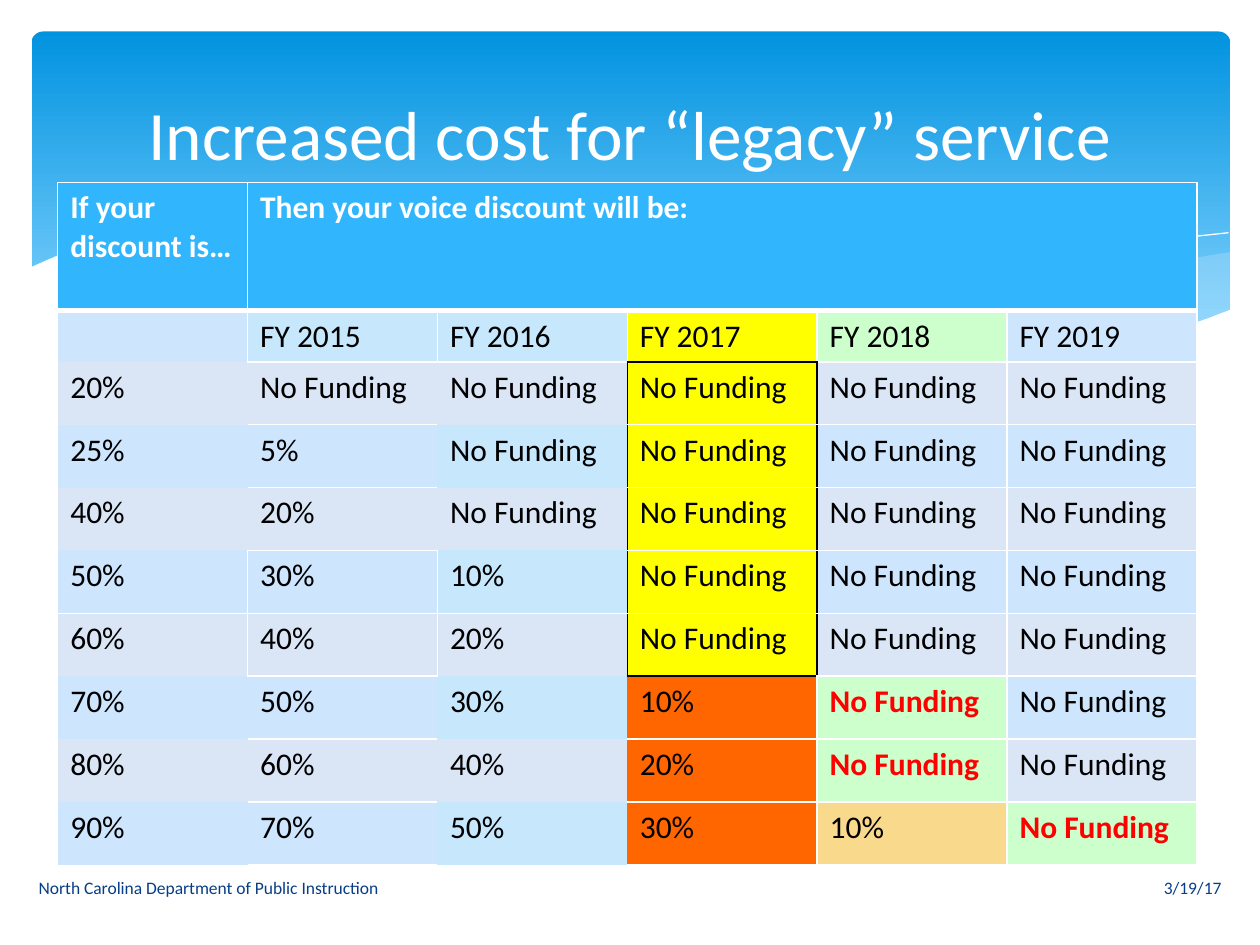
from lxml.etree import SubElement
from pptx import Presentation
from pptx.dml.color import RGBColor
from pptx.enum.shapes import MSO_SHAPE
from pptx.enum.text import MSO_ANCHOR, MSO_AUTO_SIZE, PP_ALIGN
from pptx.oxml.ns import qn
from pptx.util import Pt

WHITE, BLACK, RED, NAVY = "FFFFFF", "000000", "FF0000", "073E87"
YELLOW, ORANGE, GREEN, GOLD = "FFFF00", "FF6600", "CCFFCC", "F9D98C"
HEADER, BAND_ODD, BAND_EVEN, PALE = "31B6FD", "CEE5FE", "DAE6F6", "C6E7FC"

NONE = "No Funding"
ROWS = [
    ["If your discount is…", "Then your voice discount will be:", "", "", "", ""],
    ["", "FY 2015", "FY 2016", "FY 2017", "FY 2018", "FY 2019"],
    ["20%", NONE, NONE, NONE, NONE, NONE],
    ["25%", "5%", NONE, NONE, NONE, NONE],
    ["40%", "20%", NONE, NONE, NONE, NONE],
    ["50%", "30%", "10%", NONE, NONE, NONE],
    ["60%", "40%", "20%", NONE, NONE, NONE],
    ["70%", "50%", "30%", "10%", NONE, NONE],
    ["80%", "60%", "40%", "20%", NONE, NONE],
    ["90%", "70%", "50%", "30%", "10%", NONE],
]
NEWLY_LOST = {(7, 4), (8, 4), (9, 5)}

RIGHT_SWELL = [(685, 126), (655, 131), (624, 138), (581, 148), (524, 161), (458, 173),
               (490, 177), (527, 181), (560, 182), (597, 181), (628, 176), (655, 171),
               (685, 160)]
MIDDLE_SWELL = [(625, 179), (585, 173), (540, 165), (490, 155), (435, 142), (402, 134),
                (362, 126), (317, 120), (269, 116), (230, 116), (188, 120), (228, 125),
                (273, 134), (336, 149), (390, 161), (450, 172), (502, 179), (555, 182),
                (593, 181)]
FALLING_CREST = [(204, 122), (236, 118), (282, 117), (334, 119), (382, 124), (440, 132),
                 (505, 145), (580, 163), (635, 178)]
RISING_CREST = [(423, 167), (482, 151), (541, 138), (606, 125), (647, 119), (684, 115)]
WHITE_WAVE = [(685.4, 159), (672, 164), (652, 171), (629, 176), (603, 179), (575, 181),
              (542, 181), (505, 178), (463, 173), (416, 165), (363, 154), (304, 140),
              (263, 131), (227, 124), (192, 119), (162, 116), (134, 114.5), (109, 114.5),
              (87, 115), (68, 117), (50, 119.5), (37, 122), (24.5, 125), (15, 128),
              (8, 131), (-1.4, 135), (-1.4, 219), (685.4, 219)]


def rgb(value):
    return RGBColor.from_string(value)


def write(frame, text, size=18, color=BLACK, bold=False, align=PP_ALIGN.LEFT):
    paragraph = frame.paragraphs[0]
    paragraph.alignment = align
    run = paragraph.add_run()
    run.text = text
    run.font.name = "Calibri"
    run.font.size = Pt(size)
    run.font.bold = bold
    run.font.color.rgb = rgb(color)


def add_wave(slide, left, top, points, fill=None, alpha=None, line=None):
    placed = [(left + x, top + y) for x, y in points]
    builder = slide.shapes.build_freeform(*placed[0], scale=Pt(1))
    builder.add_line_segments(placed[1:], close=fill is not None)
    wave = builder.convert_to_shape()
    wave.shadow.inherit = False
    if fill:
        wave.fill.solid()
        wave.fill.fore_color.rgb = rgb(fill)
        if alpha:
            color = wave.element.spPr.find(qn("a:solidFill"))[0]
            SubElement(color, qn("a:alpha"), val=str(alpha * 1000))
    else:
        wave.fill.background()
    if line:
        wave.line.color.rgb = rgb(line)
        wave.line.width = Pt(0)
    else:
        wave.line.fill.background()


def add_backdrop(slide, left, top, width, height):
    sky = slide.shapes.add_shape(MSO_SHAPE.ROUNDED_RECTANGLE,
                                 Pt(left), Pt(top), Pt(width), Pt(height))
    sky.shadow.inherit = False
    sky.adjustments[0] = 0.034
    sky.line.fill.background()
    sky.fill.gradient()
    sky.fill.gradient_angle = 270
    for stop, color, position in zip(sky.fill.gradient_stops, ("0293E0", "83D3FE"), (0, 0.9)):
        stop.color.rgb = rgb(color)
        stop.position = position
    add_wave(slide, left, top, RIGHT_SWELL, fill=PALE, alpha=29)
    add_wave(slide, left, top, MIDDLE_SWELL, fill=PALE, alpha=40)
    add_wave(slide, left, top, FALLING_CREST, line=WHITE)
    add_wave(slide, left, top, RISING_CREST, line=WHITE)
    add_wave(slide, left, top, WHITE_WAVE, fill=WHITE)


def cell_fill(row, col):
    if row == 0:
        return HEADER
    if (row, col) in NEWLY_LOST | {(1, 4)}:
        return GREEN
    if (row, col) == (9, 4):
        return GOLD
    if col == 3:
        return YELLOW if row < 7 else ORANGE
    if row % 2 == 0:
        return BAND_EVEN
    return PALE if col == 2 or (row, col) == (1, 1) else BAND_ODD


def cell_borders(row, col):
    sides = "LRTB"
    if row in (2, 3, 4, 7, 8, 9) and col < 3:
        sides = "TB" if col == 1 else ""
    elif row >= 7 and col == 3:
        sides = "RTB"
    elif row == 5 and col in (0, 2):
        sides = "LRB"
    elif (row, col) in {(1, 0), (6, 0), (6, 2)}:
        sides = "LRT"
    borders = {side: (WHITE, 1) for side in sides}
    if row == 0:
        borders["B"] = (WHITE, 3)
    outline = {2: "R", 3: "LR", 4: "L"}.get(col, "") if 2 <= row <= 6 else ""
    if col == 3:
        outline += {1: "B", 2: "T", 6: "B", 7: "T"}.get(row, "")
    borders.update({side: (BLACK, 1) for side in outline})
    return borders


def draw_borders(cell, borders):
    properties = cell._tc.get_or_add_tcPr()
    for side in "LRTB":
        color, width = borders.get(side, (None, 0))
        edge = SubElement(properties, qn(f"a:ln{side}"), w=str(Pt(width)))
        if color:
            SubElement(SubElement(edge, qn("a:solidFill")), qn("a:srgbClr"), val=color)
        else:
            SubElement(edge, qn("a:noFill"))


def add_discounts(slide, left, top, width, height):
    header, years = 73.4, 29.2
    heights = [header, years] + [(height - header - years) / 8] * 8
    discounts = slide.shapes.add_table(len(ROWS), len(ROWS[0]), Pt(left), Pt(top),
                                       Pt(width), Pt(height)).table
    for column in discounts.columns:
        column.width = Pt(width / len(ROWS[0]))
    for row, texts in enumerate(ROWS):
        discounts.rows[row].height = Pt(heights[row])
        for col, text in enumerate(texts):
            cell = discounts.cell(row, col)
            draw_borders(cell, cell_borders(row, col))
            cell.fill.solid()
            cell.fill.fore_color.rgb = rgb(cell_fill(row, col))
            lost = (row, col) in NEWLY_LOST
            if text:
                write(cell.text_frame, text, bold=row == 0 or lost,
                      color=WHITE if row == 0 else RED if lost else BLACK)
    discounts.cell(0, 1).merge(discounts.cell(0, 5))


def place_title(slide, left, top, width, height):
    title = slide.shapes.title
    title.left, title.top, title.width, title.height = map(Pt, (left, top, width, height))
    title.text_frame.auto_size = MSO_AUTO_SIZE.NONE
    title.text_frame.vertical_anchor = MSO_ANCHOR.MIDDLE
    write(title.text_frame, "Increased cost for “legacy” service",
          size=39.6, color=WHITE, align=PP_ALIGN.CENTER)
    title.element.getparent().append(title.element)


def add_footer(slide, left, top, width, height):
    part = 298
    notes = [(left + width - part, "3/19/17", PP_ALIGN.RIGHT),
             (left, "North Carolina Department of Public Instruction", PP_ALIGN.LEFT)]
    for x, text, align in notes:
        frame = slide.shapes.add_textbox(Pt(x), Pt(top), Pt(part), Pt(height)).text_frame
        frame.word_wrap = True
        frame.vertical_anchor = MSO_ANCHOR.MIDDLE
        write(frame, text, size=10, color=NAVY, align=align)


def main():
    deck = Presentation()
    deck.slide_width, deck.slide_height = Pt(720), Pt(540)
    slide = deck.slides.add_slide(deck.slide_layouts[5])
    add_backdrop(slide, 18, 18, 685, 194.4)
    add_discounts(slide, 33, 104.2, 651, 390)
    place_title(slide, 36, 26.5, 648, 98.5)
    add_footer(slide, 15, 492.5, 690, 28.8)
    deck.save("out.pptx")


if __name__ == "__main__":
    main()
